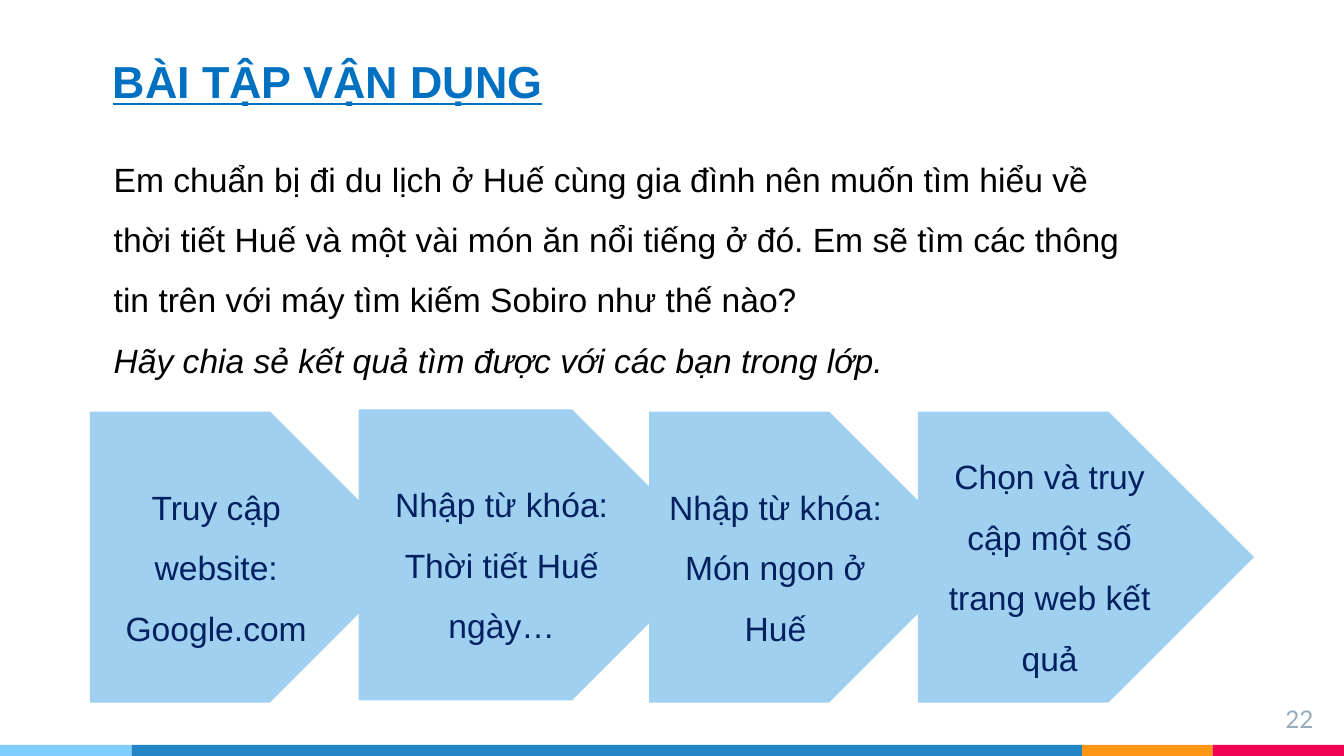
from dataclasses import dataclass

import pptx
import pptx.dml.color
import pptx.enum.shapes
import pptx.enum.text
import pptx.util

Cm = pptx.util.Cm
SHAPE = pptx.enum.shapes.MSO_SHAPE
ALIGN = pptx.enum.text.PP_ALIGN
ANCHOR = pptx.enum.text.MSO_ANCHOR

COLORS = {
    "title": "0070C0", "body": "000000", "number": "97ABBC",
    "step": "9FD0EF", "step_text": "002060",
    "sky": "7ECEFD", "blue": "2185C5", "orange": "FF9715", "red": "F20253",
}


@dataclass
class Step:
    left: float
    top: float
    width: float
    lines: list[str]


@dataclass
class Stripe:
    width: float
    color: str


STRIPES = [Stripe(2.49, "sky"), Stripe(17.96, "blue"),
           Stripe(2.47, "orange"), Stripe(2.48, "red")]

STEPS = [
    Step(1.7, 7.78, 6.15, ["Truy cập website:", "Google.com"]),
    Step(6.78, 7.74, 6.78, ["Nhập từ khóa: Thời tiết Huế ngày…"]),
    Step(12.27, 7.78, 6.15, ["Nhập từ khóa: Món ngon ở Huế"]),
    Step(17.35, 7.78, 6.35, ["Chọn và truy cập một số trang web kết quả"]),
]
STEP_HEIGHT = 5.5

QUESTION = [
    "Em chuẩn bị đi du lịch ở Huế cùng gia đình nên muốn tìm hiểu về",
    "thời tiết Huế và một vài món ăn nổi tiếng ở đó. Em sẽ tìm các thông",
    "tin trên với máy tìm kiếm Sobiro như thế nào?",
    "Hãy chia sẻ kết quả tìm được với các bạn trong lớp.",
]


def rgb(name: str) -> pptx.dml.color.RGBColor:
    return pptx.dml.color.RGBColor.from_string(COLORS[name])


def write(tf, lines: list[str], *, color: str, size: float = 18,
          font: str = "Arial", align=ALIGN.LEFT, spacing: float = 1.0,
          anchor=ANCHOR.TOP, wrap: bool = True, bold: bool = False,
          underline: bool = False) -> None:
    """Fill a text frame with one paragraph per line."""
    tf.word_wrap = wrap
    tf.vertical_anchor = anchor
    for i, line in enumerate(lines):
        p = tf.paragraphs[0] if i == 0 else tf.add_paragraph()
        p.alignment = align
        p.line_spacing = spacing
        r = p.add_run()
        r.text = line
        r.font.name = font
        r.font.size = pptx.util.Pt(size)
        r.font.bold = bold
        r.font.underline = underline
        r.font.color.rgb = rgb(color)


def set_insets(tf, inset: float) -> None:
    tf.margin_left = tf.margin_right = Cm(inset)
    tf.margin_top = tf.margin_bottom = Cm(inset)


def add_filled(s, kind, left: float, top: float, width: float, height: float,
               color: str):
    sp = s.shapes.add_shape(kind, Cm(left), Cm(top), Cm(width), Cm(height))
    sp.shadow.inherit = False
    sp.fill.solid()
    sp.fill.fore_color.rgb = rgb(color)
    sp.line.fill.background()
    return sp


def add_stripes(s, stripes: list[Stripe]) -> None:
    left = 0.0
    for stripe in stripes:
        add_filled(s, SHAPE.RECTANGLE, left, 14.08, stripe.width, 0.21, stripe.color)
        left += stripe.width


def add_title(s, text: str) -> None:
    sp = s.shapes.title
    sp.left, sp.top, sp.width, sp.height = Cm(1.88), Cm(0.79), Cm(8.92), Cm(1.5)
    tf = sp.text_frame
    tf.auto_size = pptx.enum.text.MSO_AUTO_SIZE.NONE
    set_insets(tf, 0.25)
    write(tf, [text], color="title", size=24, bold=True, underline=True,
          anchor=ANCHOR.BOTTOM)


def add_question(s, lines: list[str]) -> None:
    """Add the question; its last line is the italic request."""
    tf = s.shapes.add_textbox(Cm(1.9), Cm(2.49), Cm(19.86), Cm(4.88)).text_frame
    write(tf, lines, color="body", spacing=1.5, wrap=False)
    tf.paragraphs[-1].runs[0].font.italic = True


def add_step(s, step: Step) -> None:
    sp = add_filled(s, SHAPE.PENTAGON, step.left, step.top, step.width,
                    STEP_HEIGHT, "step")
    write(sp.text_frame, step.lines, color="step_text", align=ALIGN.CENTER,
          spacing=1.5, anchor=ANCHOR.MIDDLE)


def add_page_number(s, number: int) -> None:
    tf = s.shapes.add_textbox(Cm(23.55), Cm(13.06), Cm(1.52), Cm(0.86)).text_frame
    set_insets(tf, 0.25)
    write(tf, [str(number)], color="number", size=13, font="Lato", align=ALIGN.RIGHT)


def main() -> None:
    prs = pptx.Presentation()
    prs.slide_width, prs.slide_height = Cm(25.4), Cm(14.29)
    s = prs.slides.add_slide(prs.slide_layouts.get_by_name("Title Only"))
    add_stripes(s, STRIPES)
    add_title(s, "BÀI TẬP VẬN DỤNG")
    add_page_number(s, 22)
    add_question(s, QUESTION)
    for step in STEPS:
        add_step(s, step)
    prs.save("out.pptx")


if __name__ == "__main__":
    main()
